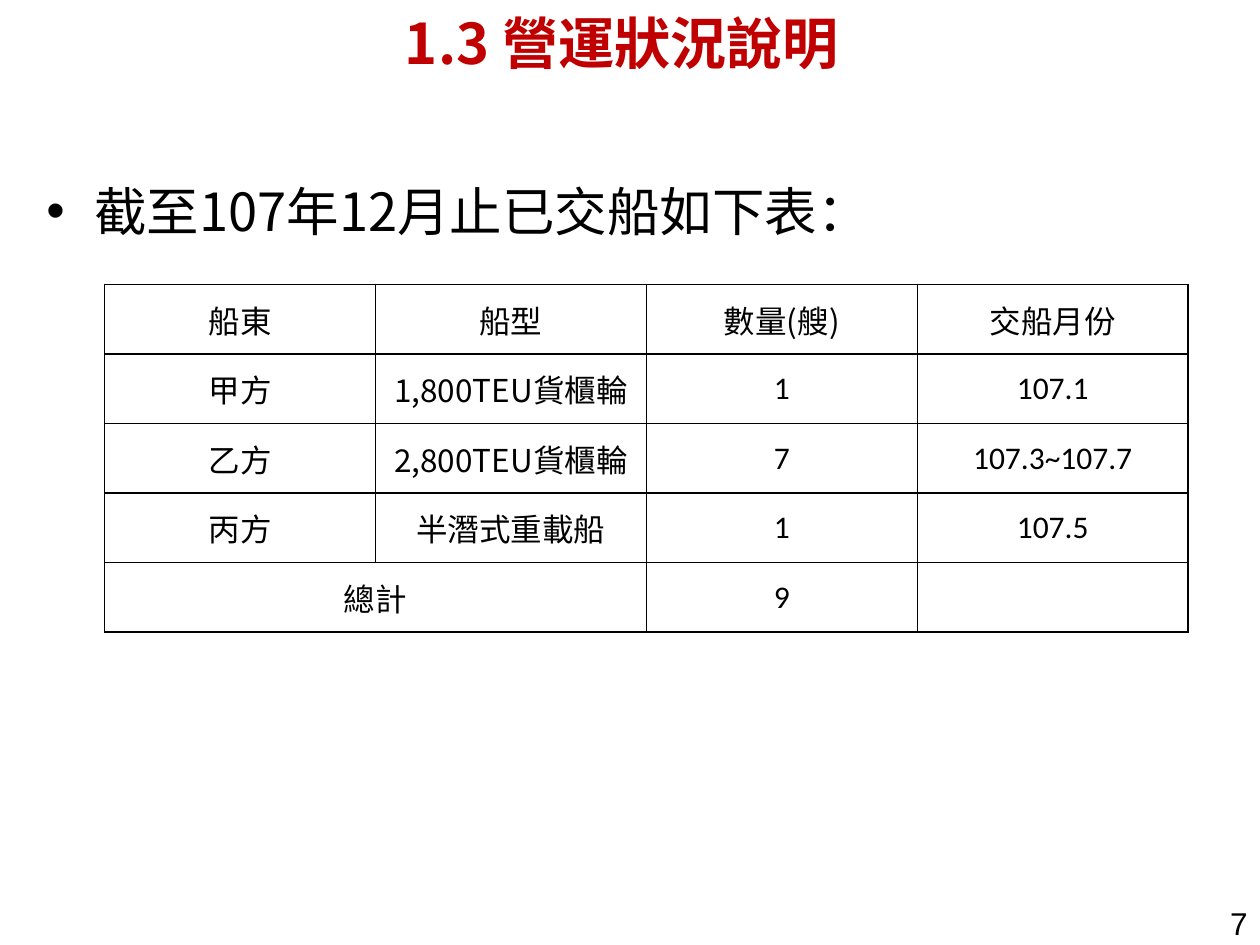
from lxml import etree
from pptx import Presentation
from pptx import util as u
from pptx.dml.color import RGBColor
from pptx.enum import text
from pptx.oxml.ns import qn

SANS, LATIN = "Noto Sans CJK SC", "Calibri"
AL, MID = text.PP_ALIGN, text.MSO_ANCHOR.MIDDLE


def paint(code):
    return RGBColor.from_string(code)


def node(root, tag, **attrs):
    return etree.SubElement(root, qn(tag), attrs)


def write(para, words, size=18, face=SANS, color="000000", bold=False, align=AL.LEFT):
    para.alignment = align
    run = para.add_run()
    run.text = words
    font = run.font
    font.size, font.bold, font.name = u.Pt(size), bold, face
    font.color.rgb = paint(color)
    node(run._r.get_or_add_rPr(), "a:ea", typeface=SANS)


class Deck:
    red, ink, paper = "C00000", "000000", "FFFFFF"

    def __init__(self):
        self.show = Presentation()
        self.show.slide_width, self.show.slide_height = u.Inches(10), u.Inches(7.5)
        self.slide = self.show.slides.add_slide(self.show.slide_layouts[5])

    def area(self, x, y, w, h):
        wide, high = self.show.slide_width, self.show.slide_height
        return int(x * wide), int(y * high), int(w * wide), int(h * high)

    def title(self, words, *box):
        shape = self.slide.shapes.title
        shape.left, shape.top, shape.width, shape.height = self.area(*box)
        frame = shape.text_frame
        frame.vertical_anchor, frame.word_wrap = MID, True
        write(frame.paragraphs[0], words, size=32, color=self.red, bold=True, align=AL.CENTER)

    def label(self, words, *box, bullet=False, anchor=text.MSO_ANCHOR.TOP, **style):
        frame = self.slide.shapes.add_textbox(*self.area(*box)).text_frame
        frame.word_wrap, frame.vertical_anchor = True, anchor
        para = frame.paragraphs[0]
        if bullet:
            props = para._p.get_or_add_pPr()
            dent = u.Inches(0.38)
            props.set("marL", str(dent))
            props.set("indent", str(-dent))
            node(props, "a:buFont", typeface="Arial")
            node(props, "a:buChar", char="•")
        write(para, words, **style)

    def border(self, cell):
        props = cell._tc.get_or_add_tcPr()
        for side in ("L", "R", "T", "B"):
            line = node(props, "a:ln" + side, w=str(u.Pt(1)))
            node(node(line, "a:solidFill"), "a:srgbClr", val=self.ink)

    def table(self, rows, *box):
        grid = self.slide.shapes.add_table(len(rows), len(rows[0]), *self.area(*box)).table
        for r, row in enumerate(rows):
            for c, words in enumerate(row):
                cell = grid.cell(r, c)
                self.border(cell)
                cell.fill.solid()
                cell.fill.fore_color.rgb = paint(self.paper)
                cell.vertical_anchor = MID
                if words:
                    face = LATIN if r and c > 1 else SANS
                    write(cell.text_frame.paragraphs[0], words, face=face, align=AL.CENTER)
        return grid


def main():
    deck = Deck()
    deck.title("1.3 營運狀況說明", 0.136, 0, 0.715, 0.09)
    deck.label("截至107年12月止已交船如下表：", 0.027, 0.183, 0.943, 0.78, bullet=True, size=30)
    rows = [
        ("船東", "船型", "數量(艘)", "交船月份"),
        ("甲方", "1,800TEU貨櫃輪", "1", "107.1"),
        ("乙方", "2,800TEU貨櫃輪", "7", "107.3~107.7"),
        ("丙方", "半潛式重載船", "1", "107.5"),
        ("總計", "", "9", ""),
    ]
    grid = deck.table(rows, 0.083, 0.301, 0.86, 0.368)
    grid.cell(4, 0).merge(grid.cell(4, 1))
    deck.label("7", 0.837, 0.953, 0.163, 0.047, anchor=MID, face="Arial", align=AL.RIGHT)
    deck.show.save("out.pptx")


if __name__ == "__main__":
    main()
